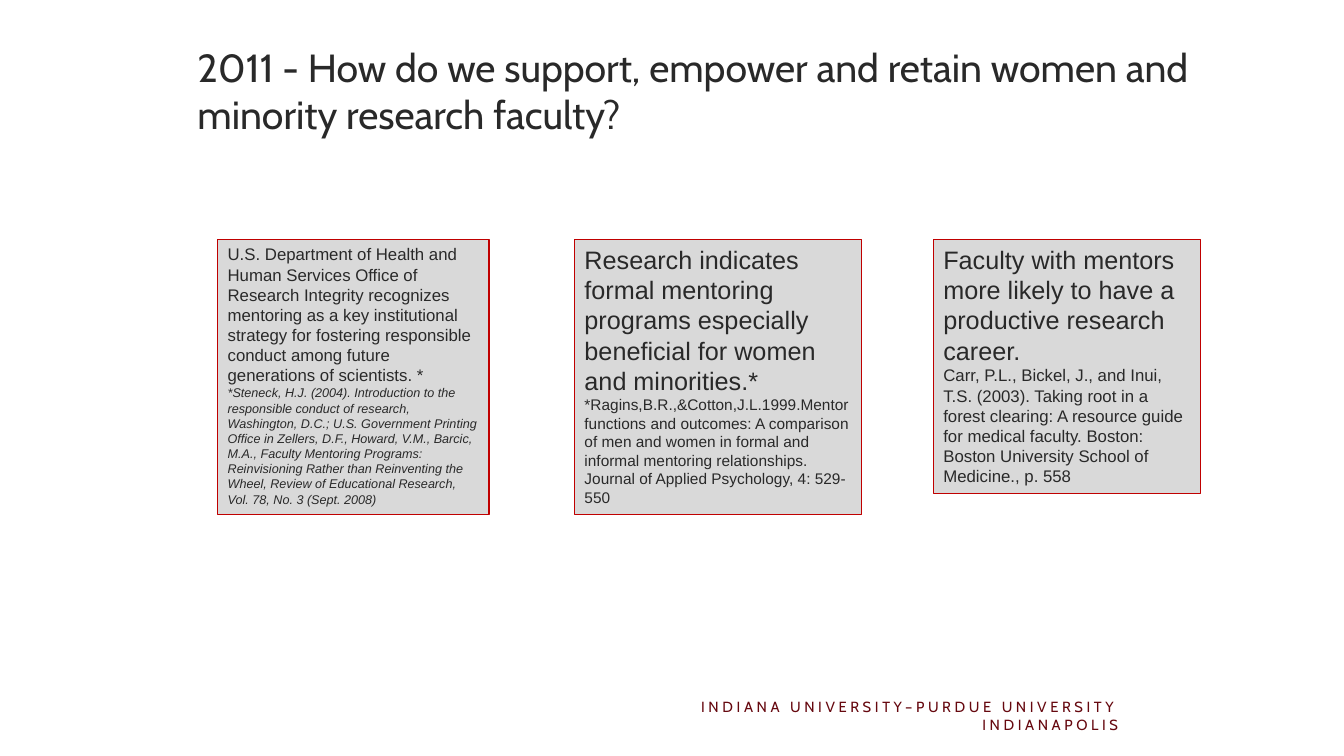
from dataclasses import dataclass

from lxml.etree import SubElement
from pptx import Presentation
from pptx.dml.color import RGBColor
from pptx.enum.shapes import MSO_SHAPE
from pptx.enum.text import MSO_ANCHOR, MSO_AUTO_SIZE, PP_ALIGN
from pptx.oxml.ns import qn
from pptx.util import Inches, Pt


@dataclass(frozen=True)
class Theme:
    heading_font: str = "Cabin"
    body_font: str = "Arial"
    ink: str = "292929"
    crimson: str = "66080F"
    panel: str = "D9D9D9"
    border: str = "C00000"
    title_size: float = 28
    footer_size: float = 10.5
    footer_tracking: float = 2.6
    lead_size: float = 18
    text_size: float = 12
    small_size: float = 11
    note_size: float = 9


class SlideBuilder:
    """Places elements by percentages of the slide's width and height."""

    def __init__(self, presentation, theme):
        self.theme = theme
        self.width = presentation.slide_width
        self.height = presentation.slide_height
        self.slide = presentation.slides.add_slide(presentation.slide_layouts[6])

    def area(self, left, top, width, height):
        return (int(self.width * left / 100), int(self.height * top / 100),
                int(self.width * width / 100), int(self.height * height / 100))

    def add_run(self, paragraph, text, size, font, color, italic=None):
        run = paragraph.add_run()
        run.text = text
        run.font.size = Pt(size)
        run.font.name = font
        run.font.color.rgb = RGBColor.from_string(color)
        run.font.italic = italic
        return run

    def heading(self, area, text, size, color, alignment=PP_ALIGN.LEFT):
        frame = self.slide.shapes.add_textbox(*self.area(*area)).text_frame
        frame.word_wrap = True
        frame.vertical_anchor = MSO_ANCHOR.MIDDLE
        paragraph = frame.paragraphs[0]
        paragraph.alignment = alignment
        return self.add_run(paragraph, text, size, self.theme.heading_font, color)

    def title(self, area, text):
        run = self.heading(area, text, self.theme.title_size, self.theme.ink)
        # Soft shadow below the letters; effects follow the fill
        effects = SubElement(run.font._element, qn("a:effectLst"))
        run.font._element.find(qn("a:solidFill")).addnext(effects)
        shadow = SubElement(effects, qn("a:outerShdw"), blurRad="38100",
                            dist="38100", dir="5400000", algn="tl")
        black = SubElement(shadow, qn("a:srgbClr"), val="000000")
        SubElement(black, qn("a:alpha"), val="43000")

    def footer(self, area, text):
        run = self.heading(area, text, self.theme.footer_size,
                           self.theme.crimson, PP_ALIGN.RIGHT)
        run.font._element.set("spc", str(int(self.theme.footer_tracking * 100)))

    def card(self, area, line_width, statement, citation):
        shape = self.slide.shapes.add_shape(MSO_SHAPE.RECTANGLE, *self.area(*area))
        shape.shadow.inherit = False
        shape.fill.solid()
        shape.fill.fore_color.rgb = RGBColor.from_string(self.theme.panel)
        shape.line.color.rgb = RGBColor.from_string(self.theme.border)
        shape.line.width = Pt(line_width)
        frame = shape.text_frame
        frame.word_wrap = True
        frame.auto_size = MSO_AUTO_SIZE.SHAPE_TO_FIT_TEXT
        frame.vertical_anchor = MSO_ANCHOR.TOP
        for paragraph, (text, size, italic) in zip(
                (frame.paragraphs[0], frame.add_paragraph()), (statement, citation)):
            paragraph.alignment = PP_ALIGN.LEFT
            self.add_run(paragraph, text, size, self.theme.body_font,
                         self.theme.ink, italic)


def main():
    presentation = Presentation()
    presentation.slide_width = Inches(13.33)
    presentation.slide_height = Inches(7.5)
    theme = Theme()
    builder = SlideBuilder(presentation, theme)

    # Title and footer
    builder.title((13.95, 4, 81, 15.87),
                  "2011 - How do we support, empower and retain women and "
                  "minority research faculty?")
    builder.footer((50.5, 92, 33.45, 5.33),
                   "INDIANA UNIVERSITY–PURDUE UNIVERSITY INDIANAPOLIS")

    # Evidence cards: left, width, height, line width, statement, citation
    cards_top = 31.65
    cards = [
        (16.2, 20.18, 36.4, 1,
         ("U.S. Department of Health and Human Services Office of Research "
          "Integrity recognizes mentoring as a key institutional strategy for "
          "fostering responsible conduct among future generations of "
          "scientists. *", theme.text_size, None),
         ("*Steneck, H.J. (2004). Introduction to the responsible conduct of "
          "research, Washington, D.C.; U.S. Government Printing Office in "
          "Zellers, D.F., Howard, V.M., Barcic, M.A., Faculty Mentoring "
          "Programs: Reinvisioning Rather than Reinventing the Wheel, Review "
          "of Educational Research, Vol. 78, No. 3 (Sept. 2008)",
          theme.note_size, True)),
        (42.75, 21.38, 36.4, 0.75,
         ("Research indicates formal mentoring programs especially beneficial "
          "for women and minorities.*", theme.lead_size, None),
         ("*Ragins,B.R.,&Cotton,J.L.1999.Mentor functions and outcomes: A "
          "comparison of men and women in formal and informal mentoring "
          "relationships. Journal of Applied Psychology, 4: 529-550",
          theme.small_size, None)),
        (69.45, 19.88, 33.6, 0.75,
         ("Faculty with mentors more likely to have a productive research "
          "career.", theme.lead_size, None),
         ("Carr, P.L., Bickel, J., and Inui, T.S. (2003). Taking root in a "
          "forest clearing: A resource guide for medical faculty. Boston: "
          "Boston University School of Medicine., p. 558",
          theme.text_size, None)),
    ]
    for left, width, height, line_width, statement, citation in cards:
        builder.card((left, cards_top, width, height), line_width,
                     statement, citation)

    presentation.save("out.pptx")


if __name__ == "__main__":
    main()
